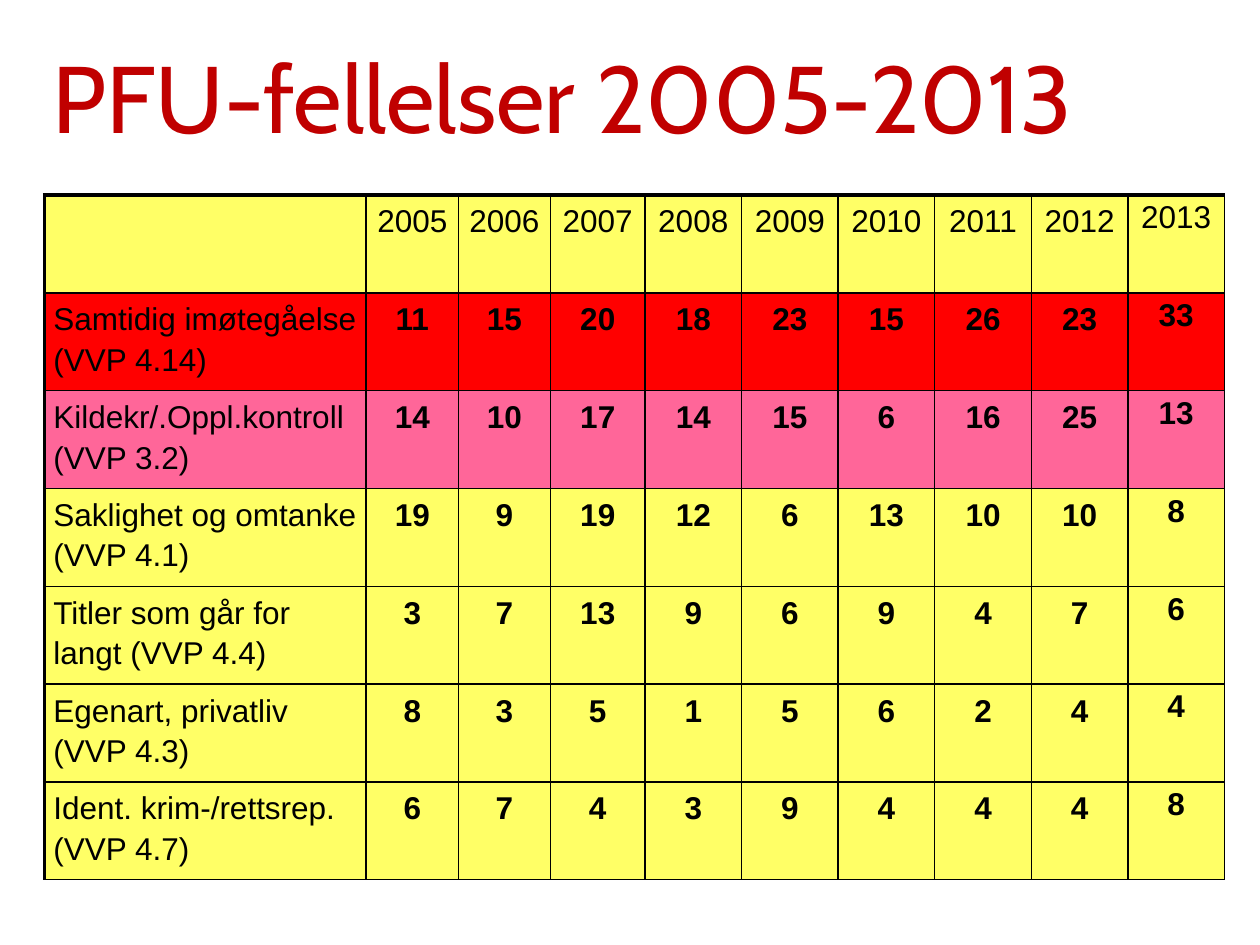
"""Build the slide with the table of PFU rulings 2005-2013."""
from dataclasses import dataclass

from lxml import etree
from pptx import Presentation
from pptx.dml.color import RGBColor
from pptx.enum.text import MSO_ANCHOR, PP_ALIGN
from pptx.oxml.ns import qn
from pptx.util import Pt

LEFT, CENTER = PP_ALIGN.LEFT, PP_ALIGN.CENTER
MIDDLE, TOP = MSO_ANCHOR.MIDDLE, MSO_ANCHOR.TOP
COLORS = {
    "title": "C00000",
    "text": "000000",
    "line": "000000",
    "yellow": "FFFF66",
    "red": "FF0000",
    "pink": "FF6699",
}
COL_WIDTHS = [183.7, 52.8, 52.6, 54] + [55.2] * 6
ROW_HEIGHT = 55.9
THIN, THICK = 1, 2.25


@dataclass
class Row:
    label: str
    values: list[int]
    fill: str = "yellow"
    bold: bool = True


ROWS = [
    Row("", list(range(2005, 2014)), bold=False),
    Row("Samtidig imøtegåelse\n(VVP 4.14)", [11, 15, 20, 18, 23, 15, 26, 23, 33], "red"),
    Row("Kildekr/.Oppl.kontroll\n(VVP 3.2)", [14, 10, 17, 14, 15, 6, 16, 25, 13], "pink"),
    Row("Saklighet og omtanke\n(VVP 4.1)", [19, 9, 19, 12, 6, 13, 10, 10, 8]),
    Row("Titler som går for langt (VVP 4.4)", [3, 7, 13, 9, 6, 9, 4, 7, 6]),
    Row("Egenart, privatliv (VVP 4.3)", [8, 3, 5, 1, 5, 6, 2, 4, 4]),
    Row("Ident. krim-/rettsrep.\n(VVP 4.7)", [6, 7, 4, 3, 9, 4, 4, 4, 8]),
]


def rgb(name: str) -> RGBColor:
    return RGBColor.from_string(COLORS[name])


def set_borders(cell, left: float, top: float) -> None:
    tc_pr = cell._tc.get_or_add_tcPr()
    widths = {"a:lnL": left, "a:lnR": THIN, "a:lnT": top, "a:lnB": THIN}
    for i, (tag, width) in enumerate(widths.items()):
        ln = etree.Element(qn(tag), w=str(Pt(width)))
        fill = etree.SubElement(ln, qn("a:solidFill"))
        etree.SubElement(fill, qn("a:srgbClr"), val=COLORS["line"])
        tc_pr.insert(i, ln)


def fill_cell(cell, text: str, fill: str, align: PP_ALIGN, bold: bool, inset: bool) -> None:
    cell.fill.solid()
    cell.fill.fore_color.rgb = rgb(fill)
    cell.vertical_anchor = TOP
    cell.margin_left = cell.margin_right = Pt(5 if inset else 0)
    cell.margin_top = cell.margin_bottom = Pt(2.4 if inset else 0)
    cell.text_frame.text = text
    for p in cell.text_frame.paragraphs:
        p.alignment = align
        p.line_spacing = 1.15
        p.font.name = "Arial"
        p.font.size = Pt(18)
        p.font.bold = bold
        p.font.color.rgb = rgb("text")


def add_title(s, text: str) -> None:
    sp = s.shapes.title
    sp.left, sp.top, sp.width, sp.height = Pt(0), Pt(21), Pt(629), Pt(67.5)
    tf = sp.text_frame
    tf.text = text
    tf.vertical_anchor = MIDDLE
    tf.margin_left = Pt(30)
    p = tf.paragraphs[0]
    p.alignment = LEFT
    p.font.name = "Cabin"
    p.font.size = Pt(54)
    p.font.color.rgb = rgb("title")


def add_rulings_table(s, rows: list[Row]) -> None:
    frame = s.shapes.add_table(len(rows), len(COL_WIDTHS), Pt(25.5), Pt(111.4),
                               Pt(sum(COL_WIDTHS)), Pt(ROW_HEIGHT * len(rows)))
    table = frame.table
    for column, width in zip(table.columns, COL_WIDTHS):
        column.width = Pt(width)
    last = len(COL_WIDTHS) - 1
    for r, row in enumerate(rows):
        table.rows[r].height = Pt(ROW_HEIGHT)
        for c, value in enumerate([row.label, *row.values]):
            cell = table.cell(r, c)
            fill_cell(cell, str(value), row.fill, CENTER if c else LEFT,
                      row.bold and c > 0, c < last)
            set_borders(cell, THIN if c else THICK, THIN if r else THICK)


def main() -> None:
    prs = Presentation()
    prs.slide_width, prs.slide_height = Pt(720), Pt(540)
    s = prs.slides.add_slide(prs.slide_layouts[5])
    add_title(s, "PFU-fellelser 2005-2013")
    add_rulings_table(s, ROWS)
    prs.save("out.pptx")


if __name__ == "__main__":
    main()
